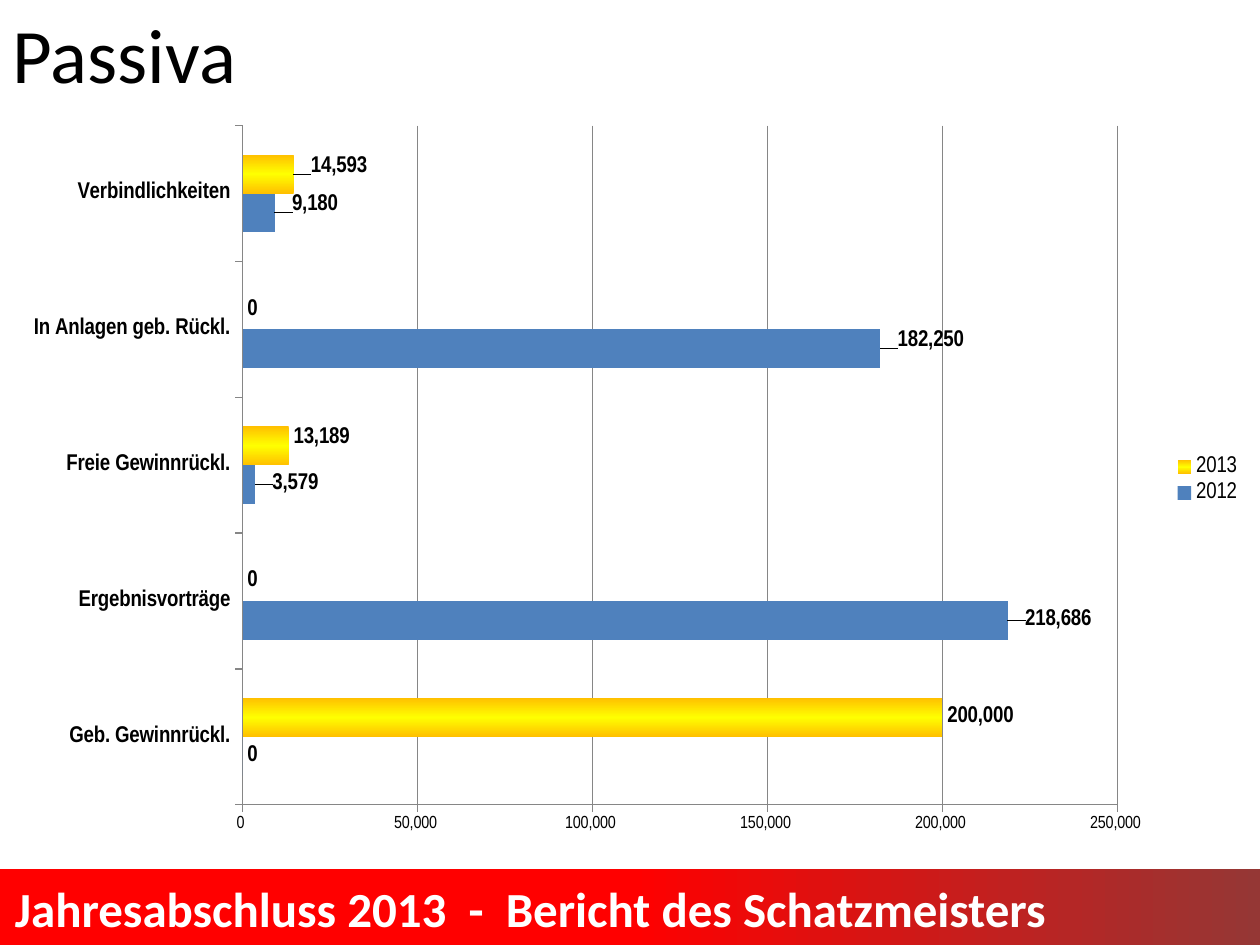
from dataclasses import dataclass

import lxml.etree
import pptx
import pptx.chart.data
import pptx.dml.color
import pptx.enum.chart
import pptx.enum.shapes
import pptx.enum.text
import pptx.oxml
import pptx.oxml.ns
import pptx.util
from pptx.util import Inches

NUMBER_FORMAT = "#,##0_ ;[Red]\\-#,##0\\ "
CATEGORIES = ["Geb. Gewinnrückl.", "Ergebnisvorträge", "Freie Gewinnrückl.",
              "In Anlagen geb. Rückl.", "Verbindlichkeiten"]
GREY = "868686"
LABEL_FONT = dict(name="Arial Narrow", size=13, bold=True, color="000000")
LEGEND_FONT = LABEL_FONT | dict(bold=False)
TICK_FONT = LEGEND_FONT | dict(size=10)


@dataclass
class YearSeries:
    name: str
    values: list[int]
    colors: list[str]
    label_shifts: list[tuple[float, float]]  # fractions of the chart size


YEARS = [
    YearSeries("2012", [0, 218686, 3579, 182250, 9180], ["4F81BD"],
               [(0, 0), (0.01, 0), (0.01, 0), (0.01, -0.01), (0.01, -0.01)]),
    YearSeries("2013", [200000, 0, 13189, 0, 14593], ["FFC000", "FFFF00", "FFC000"],
               [(0, 0), (0, 0), (0, -0.01), (0, 0), (0.01, -0.01)]),
]


def rgb(color: str) -> pptx.dml.color.RGBColor:
    return pptx.dml.color.RGBColor.from_string(color)


def set_font(font, style: dict) -> None:
    for key, value in style.items():
        if key == "color":
            font.color.rgb = rgb(value)
        else:
            setattr(font, key, pptx.util.Pt(value) if key == "size" else value)


def fill_gradient(fill, element, colors: list[str], angle: int) -> None:
    fill.gradient()
    fill.gradient_angle = angle
    stops = element.find(".//" + pptx.oxml.ns.qn("a:gsLst"))
    for stop in list(stops):
        stops.remove(stop)
    for i, color in enumerate(colors):
        stop = lxml.etree.SubElement(stops, pptx.oxml.ns.qn("a:gs"),
                                     pos=str(i * 100000 // (len(colors) - 1)))
        lxml.etree.SubElement(stop, pptx.oxml.ns.qn("a:srgbClr"), val=color)


def manual_layout(**settings) -> lxml.etree._Element:
    items = "".join(f'<c:{key} val="{value}"/>' for key, value in settings.items())
    return pptx.oxml.parse_xml(
        f'<c:layout {pptx.oxml.ns.nsdecls("c")}><c:manualLayout>{items}'
        "</c:manualLayout></c:layout>")


def write_text(sp, text: str, style: dict) -> None:
    tf = sp.text_frame
    tf.word_wrap = True
    tf.vertical_anchor = pptx.enum.text.MSO_ANCHOR.MIDDLE
    p = tf.paragraphs[0]
    p.alignment = pptx.enum.text.PP_ALIGN.LEFT
    r = p.add_run()
    r.text = text
    set_font(r.font, style)


def style_series(series, year: YearSeries) -> None:
    fill = series.format.fill
    series.invert_if_negative = False
    if len(year.colors) == 1:
        fill.solid()
        fill.fore_color.rgb = rgb(year.colors[0])
    else:
        fill_gradient(fill, series._element, year.colors, 90)
    labels = series.data_labels
    labels.show_value = True
    labels.number_format = NUMBER_FORMAT
    labels.number_format_is_linked = False
    set_font(labels.font, LABEL_FONT)
    # Shift single labels away from the bar ends
    for i, (dx, dy) in enumerate(year.label_shifts):
        if (dx, dy) == (0, 0):
            continue
        label = series.points[i].data_label
        set_font(label.font, LABEL_FONT)
        label.position = pptx.enum.chart.XL_LABEL_POSITION.OUTSIDE_END
        idx = series._element.xpath(f"c:dLbls/c:dLbl/c:idx[@val='{i}']")[0]
        idx.addnext(manual_layout(x=dx, y=dy))


def add_balance_chart(s) -> None:
    data = pptx.chart.data.CategoryChartData(number_format=NUMBER_FORMAT)
    data.categories = CATEGORIES
    for year in YEARS:
        data.add_series(year.name, year.values)
    chart = s.shapes.add_chart(
        pptx.enum.chart.XL_CHART_TYPE.BAR_CLUSTERED,
        Inches(0.04), Inches(0.88), Inches(9.92), Inches(5.86), data).chart
    set_font(chart.font, dict(name="Calibri", size=10, color="000000"))
    chart.has_title = False

    # Plot area
    plot = chart.plots[0]
    plot.gap_width = 150
    plot.overlap = 0
    plot.vary_by_categories = False
    area = chart._chartSpace.chart.plotArea
    for old in area.findall(pptx.oxml.ns.qn("c:layout")):
        area.remove(old)
    area.insert(0, manual_layout(layoutTarget="inner", xMode="edge", yMode="edge",
                                 x=0.19, y=0.02, w=0.7, h=0.92))
    for series, year in zip(plot.series, YEARS):
        style_series(series, year)

    # Axes
    for axis, style in ((chart.category_axis, LABEL_FONT), (chart.value_axis, TICK_FONT)):
        axis.major_tick_mark = pptx.enum.chart.XL_TICK_MARK.OUTSIDE
        axis.format.line.color.rgb = rgb(GREY)
        set_font(axis.tick_labels.font, style)
    chart.category_axis.has_major_gridlines = False
    values = chart.value_axis
    values.minimum_scale, values.maximum_scale, values.major_unit = 0, 250000, 50000
    values.has_major_gridlines = True
    values.major_gridlines.format.line.color.rgb = rgb(GREY)
    values.tick_labels.number_format = NUMBER_FORMAT
    values.tick_labels.number_format_is_linked = False

    # Legend
    chart.has_legend = True
    chart.legend.position = pptx.enum.chart.XL_LEGEND_POSITION.RIGHT
    chart.legend.include_in_layout = False
    set_font(chart.legend.font, LEGEND_FONT)


def main() -> None:
    prs = pptx.Presentation()
    prs.slide_width, prs.slide_height = Inches(10), Inches(7.5)
    s = prs.slides.add_slide(prs.slide_layouts[5])

    # Footer band
    band = s.shapes.add_shape(pptx.enum.shapes.MSO_SHAPE.RECTANGLE,
                              0, Inches(6.9), Inches(10), Inches(0.6))
    band.shadow.inherit = False
    band.line.fill.background()
    fill_gradient(band.fill, band._element, ["FF0000", "FF0000", "953735"], 0)
    footer = s.shapes.add_textbox(Inches(0.02), Inches(6.92), Inches(9.79), Inches(0.57))
    write_text(footer, "Jahresabschluss 2013  -  Bericht des Schatzmeisters",
               dict(name="Calibri", size=28, bold=True, color="FFFFFF"))

    # Title
    title = s.shapes.title
    title.left, title.top, title.width, title.height = 0, 0, Inches(7.56), Inches(0.83)
    write_text(title, "Passiva", dict(name="Calibri", size=44, color="000000"))

    add_balance_chart(s)
    prs.save("out.pptx")


if __name__ == "__main__":
    main()
